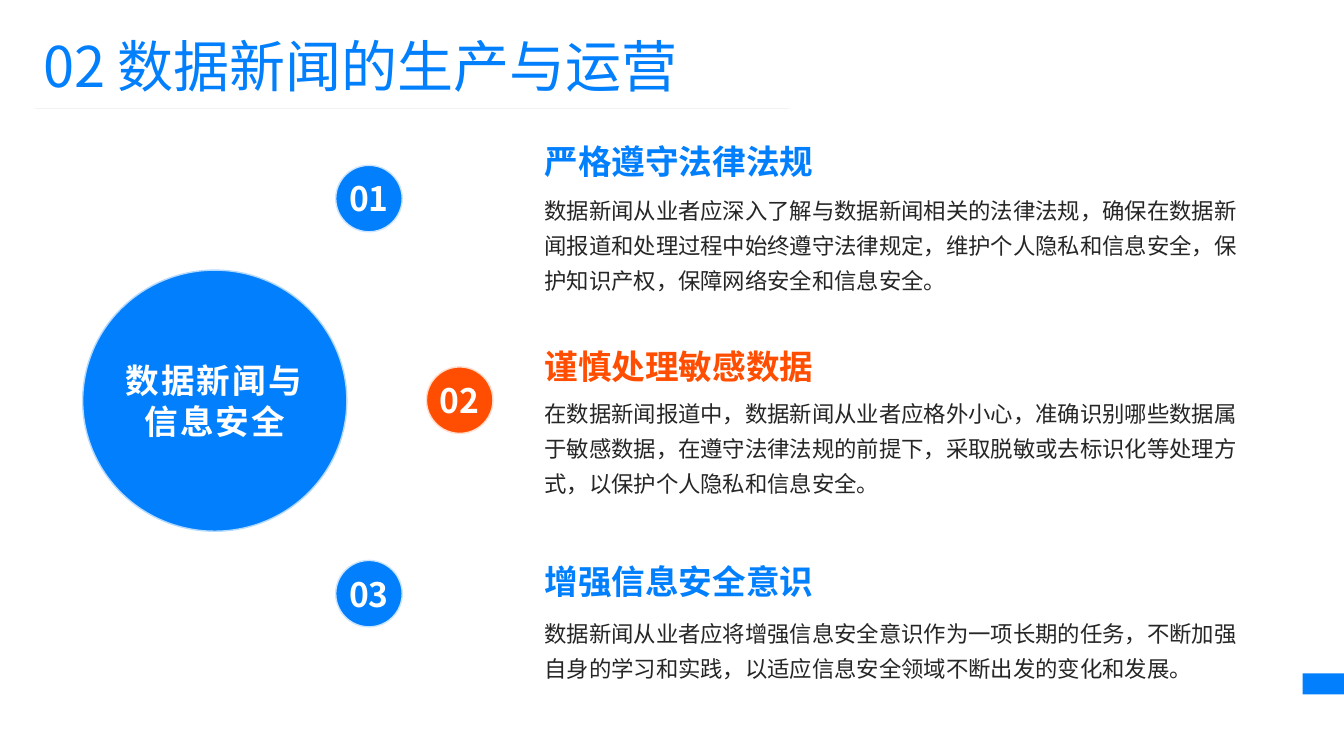
from lxml.etree import SubElement
from pptx import Presentation
from pptx.dml.color import RGBColor
from pptx.enum.shapes import MSO_CONNECTOR, MSO_SHAPE
from pptx.enum.text import MSO_ANCHOR, PP_ALIGN
from pptx.oxml.ns import qn
from pptx.util import Inches, Pt

FONT = "Noto Sans CJK SC"
BLUE = RGBColor(0x02, 0x7F, 0xFD)
ORANGE = RGBColor(0xFF, 0x4E, 0x01)
SKY = RGBColor(0xB3, 0xD9, 0xFE)
PALE = RGBColor(0xCC, 0xE5, 0xFF)
PEACH = RGBColor(0xFF, 0xDC, 0xCC)
WHITE = RGBColor(0xFF, 0xFF, 0xFF)
DARK = RGBColor(0x26, 0x26, 0x26)
GREY = RGBColor(0xF2, 0xF2, 0xF2)

TOPICS = [
    ("01", 3.33, 1.64, 1.21, 1.88, BLUE, PALE, "严格遵守法律法规",
     "数据新闻从业者应深入了解与数据新闻相关的法律法规，确保在数据新闻报道和处理过程中始终遵守法律规定，"
     "维护个人隐私和信息安全，保护知识产权，保障网络安全和信息安全。"),
    ("02", 4.23, 3.64, 3.24, 3.89, ORANGE, PEACH, "谨慎处理敏感数据",
     "在数据新闻报道中，数据新闻从业者应格外小心，准确识别哪些数据属于敏感数据，"
     "在遵守法律法规的前提下，采取脱敏或去标识化等处理方式，以保护个人隐私和信息安全。"),
    ("03", 3.33, 5.56, 5.37, 6.07, BLUE, PALE, "增强信息安全意识",
     "数据新闻从业者应将增强信息安全意识作为一项长期的任务，不断加强自身的学习和实践，"
     "以适应信息安全领域不断出发的变化和发展。"),
]


def write(frame, text, size, color, bold=False, track=0):
    """Fill a text frame with one styled paragraph and return it."""
    para = frame.paragraphs[0]
    para.text = text
    font = para.font
    font.name, font.size, font.bold = FONT, Pt(size), bold
    font.color.rgb = color
    props = para._p.pPr.find(qn("a:defRPr"))
    SubElement(props, qn("a:ea")).set("typeface", FONT)
    if track:
        props.set("spc", str(track))
    return para


def inset(frame, bottom=0):
    """Remove the margins of a text frame, except at the bottom."""
    frame.margin_left = frame.margin_right = frame.margin_top = 0
    frame.margin_bottom = Inches(bottom)


def label(slide, box, text, size, color, bold=False, tight=True, bottom=0):
    """Add a wrapped text box and return its frame and paragraph."""
    frame = slide.shapes.add_textbox(*map(Inches, box)).text_frame
    frame.word_wrap = True
    if tight:
        inset(frame, bottom)
    return frame, write(frame, text, size, color, bold)


def solid(slide, kind, box, fill, edge=None):
    """Add a filled shape with an optional outline."""
    shape = slide.shapes.add_shape(kind, *map(Inches, box))
    shape.shadow.inherit = False
    shape.fill.solid()
    shape.fill.fore_color.rgb = fill
    if edge is None:
        shape.line.fill.background()
    else:
        shape.line.color.rgb = edge
        shape.line.width = Pt(1)
    return shape


def disc(slide, box, text, fill, edge, wrap=False, track=0):
    """Add a circle with centred white text and return its frame."""
    frame = solid(slide, MSO_SHAPE.OVAL, box, fill, edge).text_frame
    frame.word_wrap = wrap
    frame.vertical_anchor = MSO_ANCHOR.MIDDLE
    write(frame, text, 24, WHITE, True, track).alignment = PP_ALIGN.CENTER
    return frame


def header(slide, left, top, width):
    """Place the slide title and the thin rule below it."""
    label(slide, (left, top, width, 0.77), "02 数据新闻的生产与运营", 40, BLUE, tight=False)
    rule = slide.shapes.add_connector(
        MSO_CONNECTOR.STRAIGHT, Inches(left + 0.02), Inches(top + 0.82),
        Inches(left + width - 0.18), Inches(top + 0.82))
    rule.line.color.rgb = GREY
    rule.line.width = Pt(0.5)
    SubElement(rule._element.spPr, qn("a:effectLst"))


def topic(slide, left, width, item):
    """Place a numbered disc with its heading and body text."""
    num, x, y, head, body, color, edge, name, text = item
    disc(slide, (x, y, 0.66, 0.66), num, color, edge)
    frame, _ = label(slide, (left, head, width - 0.17, 0.63), name, 24, color, True, bottom=0.04)
    frame.vertical_anchor = MSO_ANCHOR.BOTTOM
    _, para = label(slide, (left, body, width, 1.04), text, 16, DARK)
    para.line_spacing = 1.3


def main():
    """Build the slide and save it."""
    deck = Presentation()
    deck.slide_width, deck.slide_height = Inches(13.33), Inches(7.5)
    slide = deck.slides.add_slide(deck.slide_layouts[6])
    solid(slide, MSO_SHAPE.RECTANGLE, (12.92, 6.68, 0.41, 0.21), BLUE)
    for item in TOPICS:
        topic(slide, 5.4, 6.96, item)
    inset(disc(slide, (0.82, 2.68, 2.62, 2.59), "数据新闻与信息安全", BLUE, SKY, True, 150))
    header(slide, 0.33, 0.26, 7.68)
    deck.save("out.pptx")


if __name__ == "__main__":
    main()
